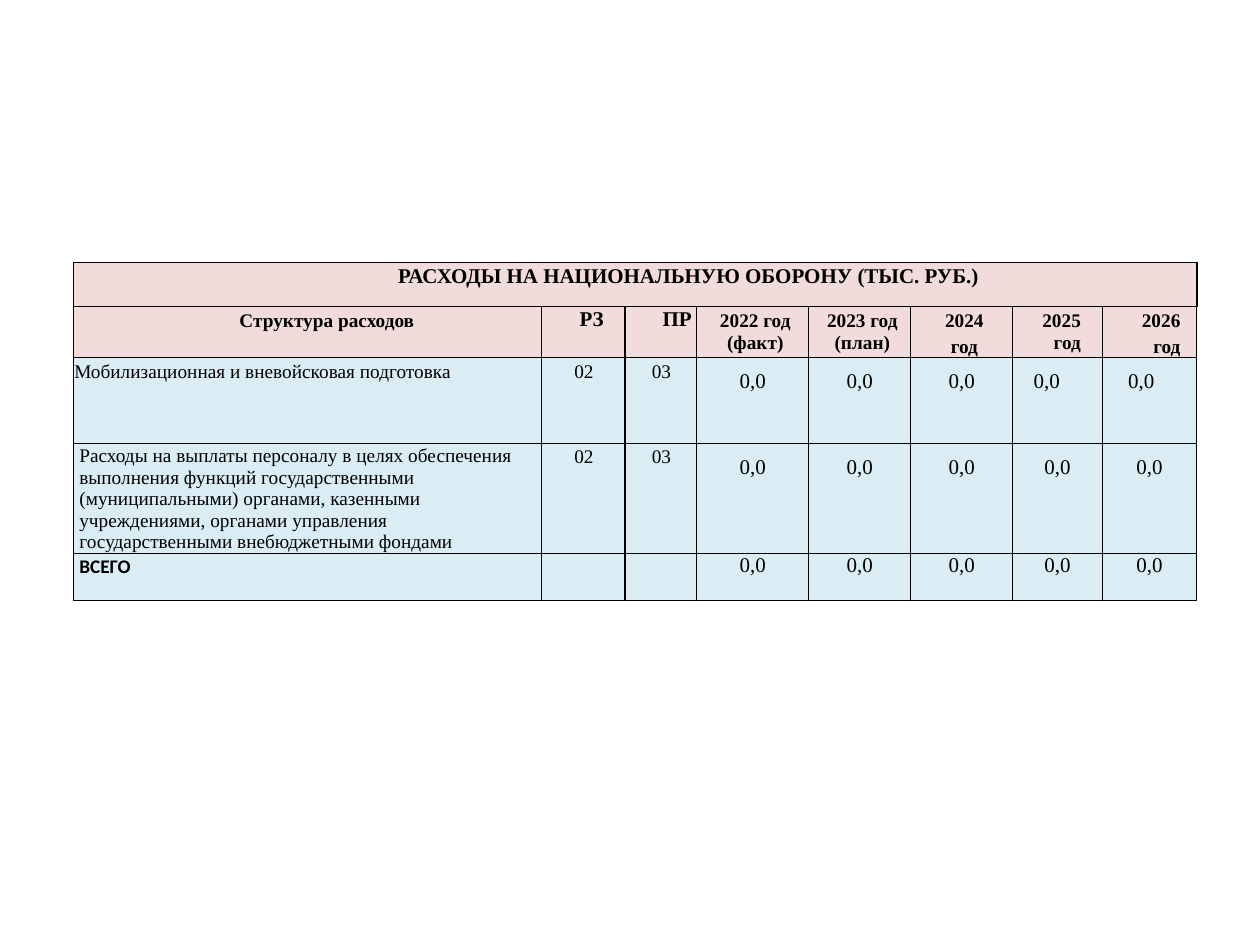
from dataclasses import dataclass, field, replace

from lxml.etree import SubElement
from pptx import Presentation
from pptx.dml.color import RGBColor
from pptx.enum.text import PP_ALIGN as Align
from pptx.oxml.ns import qn
from pptx.table import Table, _Cell as Cell
from pptx.util import Inches, Pt


@dataclass(frozen=True)
class Theme:
    header_fill: RGBColor = field(default_factory=lambda: RGBColor(0xF1, 0xDC, 0xDB))
    body_fill: RGBColor = field(default_factory=lambda: RGBColor(0xDB, 0xED, 0xF4))
    ink: RGBColor = field(default_factory=lambda: RGBColor(0, 0, 0))
    font: str = "Times New Roman"
    total_font: str = "Calibri"
    small: float = 11
    large: float = 12
    thin: float = 0.5
    thick: float = 1


@dataclass(frozen=True)
class Style:
    size: float
    font: str
    fill: RGBColor
    align: Align = Align.LEFT
    bold: bool = False
    top: float = 0.02
    left: float = 0
    right: float = 0
    line: float | None = None


@dataclass(frozen=True)
class Entry:
    lines: tuple[str, ...]
    style: Style


THEME = Theme()
COLUMNS = (3.72, 0.66, 0.57, 0.89, 0.81, 0.81, 0.71, 0.75)
ROWS = (0.35, 0.38, 0.68, 0.68, 0.38)
CODE_COLUMNS = (1, 2)
TITLE = Style(THEME.large, THEME.font, THEME.header_fill, bold=True, left=2.58, line=13.7)
HEADING = Style(THEME.small, THEME.font, THEME.header_fill, bold=True, top=0.03, left=1.32, line=12.5)
CODE_HEADING = replace(HEADING, size=THEME.large, top=0.01, left=0.3, line=None)
YEAR = replace(HEADING, align=Align.CENTER, left=0.04)
LATE_YEARS = tuple(replace(HEADING, align=Align.RIGHT, left=0, right=right) for right in (0.17, 0.13))
ITEM = Style(THEME.small, THEME.font, THEME.body_fill, left=0.01, line=12.8)
LONG_ITEM = replace(ITEM, left=0.05, line=None)
TOTAL = replace(ITEM, font=THEME.total_font, bold=True, top=0.03, left=0.05)
CODE = replace(ITEM, align=Align.CENTER)
AMOUNT = Style(THEME.large, THEME.font, THEME.body_fill, Align.CENTER, top=0.1)
TOTAL_AMOUNT = replace(AMOUNT, top=0.01)


def set_borders(cell: Cell, column: int) -> None:
    """Draw the cell's four edges, thicker around the code columns."""
    properties = cell._tc.get_or_add_tcPr()
    widths = {
        "L": THEME.thick if column in CODE_COLUMNS else THEME.thin,
        "R": THEME.thick if column + 1 in CODE_COLUMNS else THEME.thin,
        "T": THEME.thin,
        "B": THEME.thin,
    }
    for position, (side, width) in enumerate(widths.items()):
        line = SubElement(properties, qn(f"a:ln{side}"), w=str(Pt(width)))
        fill = SubElement(line, qn("a:solidFill"))
        SubElement(fill, qn("a:srgbClr"), val=str(THEME.ink))
        properties.insert(position, line)


def fill_cell(table: Table, row: int, column: int, entry: Entry) -> None:
    """Format one cell and write its paragraphs."""
    cell, style = table.cell(row, column), entry.style
    cell.margin_left = cell.margin_right = cell.margin_bottom = 0
    cell.margin_top = Inches(style.top)
    cell.fill.solid()
    cell.fill.fore_color.rgb = style.fill
    set_borders(cell, column)
    cell.text_frame.text = "\n".join(entry.lines)
    for index, paragraph in enumerate(cell.text_frame.paragraphs):
        properties = paragraph._p.get_or_add_pPr()
        properties.set("marL", str(Inches(style.left)))
        properties.set("marR", str(Inches(style.right)))
        paragraph.alignment = style.align
        if style.line:
            paragraph.line_spacing = Pt(style.line)
        if index:
            paragraph.space_before = Pt(2.2)
        for run in paragraph.runs:
            run.font.name, run.font.size = style.font, Pt(style.size)
            run.font.bold, run.font.color.rgb = style.bold, THEME.ink


def body_row(label: Entry, codes: tuple[str, str], amounts: tuple[Style, ...]) -> list[Entry]:
    """Return a label, two codes and five yearly amounts."""
    return [label, *(Entry((code,), CODE) for code in codes), *(Entry(("0,0",), style) for style in amounts)]


def table_entries() -> list[list[Entry]]:
    """Return all rows of the expenditure table."""
    title = Entry(("РАСХОДЫ НА НАЦИОНАЛЬНУЮ ОБОРОНУ (ТЫС. РУБ.)",), TITLE)
    headings = [
        Entry(("Структура расходов",), HEADING),
        Entry(("РЗ",), CODE_HEADING),
        Entry(("ПР",), CODE_HEADING),
        Entry(("2022 год (факт)",), YEAR),
        Entry(("2023 год (план)",), YEAR),
        Entry(("2024", "год"), YEAR),
        Entry(("2025 год",), LATE_YEARS[0]),
        Entry(("2026", "год"), LATE_YEARS[1]),
    ]
    shifted = tuple(replace(AMOUNT, right=style.right) for style in LATE_YEARS)
    staff = (
        "Расходы на выплаты персоналу в целях обеспечения выполнения функций "
        "государственными (муниципальными) органами, казенными учреждениями, "
        "органами управления государственными внебюджетными фондами"
    )
    return [
        [title] + [Entry(("",), TITLE)] * (len(COLUMNS) - 1),
        headings,
        body_row(Entry(("Мобилизационная и вневойсковая подготовка",), ITEM), ("02", "03"), (AMOUNT,) * 3 + shifted),
        body_row(Entry((staff,), LONG_ITEM), ("02", "03"), (AMOUNT,) * 5),
        body_row(Entry(("ВСЕГО",), TOTAL), ("", ""), (TOTAL_AMOUNT,) * 5),
    ]


def main() -> None:
    """Build the slide and save it."""
    presentation = Presentation()
    presentation.slide_width, presentation.slide_height = Inches(10), Inches(7.5)
    slide = presentation.slides.add_slide(presentation.slide_layouts[6])
    table = slide.shapes.add_table(
        len(ROWS), len(COLUMNS), Inches(0.58), Inches(2.08), Inches(sum(COLUMNS)), Inches(sum(ROWS))
    ).table
    table.first_row = table.horz_banding = False
    for column, width in zip(table.columns, COLUMNS):
        column.width = Inches(width)
    for row, height in zip(table.rows, ROWS):
        row.height = Inches(height)
    for row_index, entries in enumerate(table_entries()):
        for column_index, entry in enumerate(entries):
            fill_cell(table, row_index, column_index, entry)
    table.cell(0, 0).merge(table.cell(0, len(COLUMNS) - 1))
    presentation.save("out.pptx")


if __name__ == "__main__":
    main()
